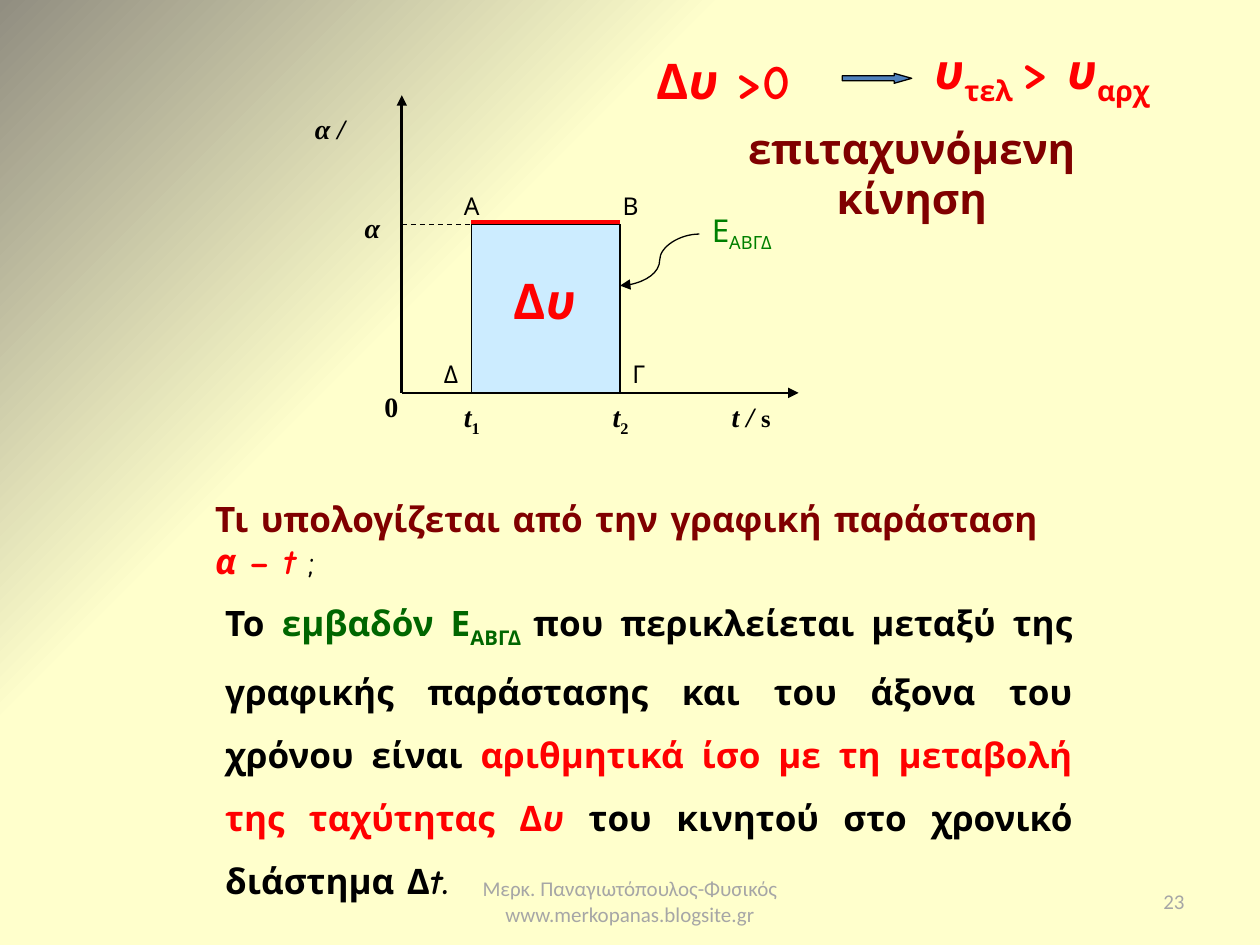
from dataclasses import dataclass

import pptx
import pptx.dml.color
import pptx.enum.dml
import pptx.enum.shapes
import pptx.enum.text
import pptx.oxml
import pptx.oxml.ns
import pptx.util

Cm, Pt = pptx.util.Cm, pptx.util.Pt
ALIGN, ANCHOR = pptx.enum.text.PP_ALIGN, pptx.enum.text.MSO_ANCHOR
SHAPE, CONNECTOR = pptx.enum.shapes.MSO_SHAPE, pptx.enum.shapes.MSO_CONNECTOR
A_NS = pptx.oxml.ns.nsdecls("a")


@dataclass(frozen=True)
class Theme:
    paper: str = "FFFFCC"
    corner: str = "918E81"
    ink: str = "000000"
    red: str = "FF0000"
    maroon: str = "800000"
    green: str = "008000"
    dark_green: str = "006600"
    area: str = "CCECFF"
    arrow: str = "4F81BD"
    muted: str = "A6A6A6"
    body_font: str = "Comic Neue"
    symbol_font: str = "Times New Roman"
    footer_font: str = "Calibri"
    formula: int = 28
    heading: int = 24
    body: int = 20
    area_name: int = 18
    symbol: int = 16
    point: int = 14
    footer: int = 12


T = Theme()


def rgb(value):
    return pptx.dml.color.RGBColor.from_string(value)


def part(text, **look):
    """A stretch of text with its own color, size, italic or sub."""
    return text, look


def add_text(slide, box, parts, size, color=T.ink, font=T.body_font, bold=True, align=ALIGN.LEFT,
             spacing=None, anchor=ANCHOR.TOP, wrap=True):
    frame = slide.shapes.add_textbox(*map(Cm, box)).text_frame
    frame.word_wrap, frame.vertical_anchor = wrap, anchor
    paragraph = frame.paragraphs[0]
    paragraph.alignment = align
    if spacing:
        paragraph.line_spacing = spacing
    paragraph.font.name, paragraph.font.size = font, Pt(size)
    paragraph.font.bold, paragraph.font.color.rgb = bold, rgb(color)
    for text, look in parts:
        if text == "\n":
            paragraph.add_line_break()
            continue
        run = paragraph.add_run()
        run.text = text
        if "color" in look:
            run.font.color.rgb = rgb(look["color"])
        if "size" in look:
            run.font.size = Pt(look["size"])
        for style in ("bold", "italic"):
            if style in look:
                setattr(run.font, style, look[style])
        if look.get("sub"):
            run._r.get_or_add_rPr().set("baseline", "-25000")


def add_line(slide, start, end, color=T.ink, width=0.75, dashed=False, arrow=None,
             kind=CONNECTOR.STRAIGHT):
    """arrow is headEnd (at start) or tailEnd (at end)."""
    line = slide.shapes.add_connector(kind, *map(Cm, (*start, *end)))
    line.line.color.rgb, line.line.width = rgb(color), Pt(width)
    if dashed:
        line.line.dash_style = pptx.enum.dml.MSO_LINE.DASH
    properties = line._element.spPr
    if arrow:
        properties.get_or_add_ln().append(
            pptx.oxml.parse_xml(f'<a:{arrow} {A_NS} type="triangle"/>'))
    properties.append(pptx.oxml.parse_xml(f"<a:effectLst {A_NS}/>"))


def add_block(slide, kind, box, fill):
    block = slide.shapes.add_shape(kind, *map(Cm, box))
    block.shadow.inherit = False
    block.fill.solid()
    block.fill.fore_color.rgb = rgb(fill)
    block.line.color.rgb, block.line.width = rgb(T.ink), Pt(0.75)
    return block


def paint_background(slide):
    fill = slide.background.fill
    fill.gradient()
    for stop, position, color in zip(fill.gradient_stops, (0.67, 1), (T.paper, T.corner)):
        stop.position, stop.color.rgb = position, rgb(color)
    linear = slide.element.find(".//" + pptx.oxml.ns.qn("a:lin"))
    linear.getparent().replace(linear, pptx.oxml.parse_xml(
        f'<a:path {A_NS} path="circle"><a:fillToRect l="100000" t="100000"/></a:path>'))


def draw_graph(slide, box):
    """Acceleration against time; the box is spanned by the two axes."""
    left, top, width, height = box
    axis = top + height
    t1, t2, level = left + 1.4, left + 4.4, axis - 3.4

    def symbol(x, y, w, *parts):
        add_text(slide, (x, y, w, 0.94), parts, T.symbol, font=T.symbol_font)

    def point(x, y, name):
        add_text(slide, (x, y, 0.91, 0.84), [part(name)], T.point, bold=False)

    # Constant acceleration and its guides
    add_line(slide, (t1, level), (t2, level), T.red, 4.5)
    add_line(slide, (left, level), (t2, level), dashed=True)
    symbol(left - 1, level - 0.4, 0.8, part("α", italic=True))
    for time, index in ((t1, "1"), (t2, "2")):
        add_line(slide, (time, level), (time, axis), dashed=True)
        symbol(time - 0.4, axis, 1.2, part("t", italic=True), part(index, sub=True))

    # Corners of the area
    point(t1 - 0.4, level - 0.8, "Α")
    point(t2 - 0.2, level - 0.8, "Β")
    point(t2, axis - 0.8, "Γ")
    point(t1 - 0.8, axis - 0.8, "Δ")

    # Area with its callout
    add_line(slide, (t2, level + 1.24), (t2 + 1.6, level + 0.2), arrow="headEnd",
             kind=CONNECTOR.CURVE)
    add_text(slide, (t2 + 1.6, level - 0.4, 2.8, 1.27),
             [part("Ε"), part("ΑΒΓΔ", sub=True)], T.area_name, T.green, bold=False)
    add_block(slide, SHAPE.RECTANGLE, (t1, level, t2 - t1, axis - level), T.area)
    add_text(slide, (t1 + 0.6, level + 0.8, 2, 1.45),
             [part("Δ"), part("υ", italic=True)], T.formula, T.red)

    # Axes
    for end in ((left, top), (left + width, axis)):
        add_line(slide, (left, axis), end, width=1.5, arrow="tailEnd")
    symbol(left + 6.4, axis, 1.8, part("t / ", italic=True), part("s", size=T.point))
    symbol(left - 0.6, axis - 0.2, 0.8, part("0"))
    symbol(left - 2, top + 0.2, 1.4, part("α /", italic=True))


def write_conclusion(slide, box):
    """Sign of the velocity change and the kind of motion."""
    left, top, width, height = box
    add_text(slide, (left + 0.7, top + 1.65, 9.4, 1.27), [part("επιταχυνόμενη κίνηση")],
             T.heading, T.maroon, align=ALIGN.CENTER)
    add_text(slide, (left, top + 0.2, 4.2, 1.45),
             [part("Δ"), part("υ ", italic=True), part(">0")], T.formula, T.red)
    implies = add_block(slide, SHAPE.RIGHT_ARROW, (left + 4, top + 0.79, 1.4, 0.2), T.arrow)
    implies.adjustments[1] = 1.77
    add_text(slide, (left + 5.6, top, width - 5.6, 1.45),
             [part("υ", italic=True), part("τελ ", sub=True), part("> "),
              part("υ", italic=True), part("αρχ", sub=True)], T.formula, T.red, wrap=False)


def write_explanation(slide, box):
    """Question and answer on what the graph gives."""
    left, top, width, height = box
    add_text(slide, (left, top, width, 1.12),
             [part("Τι υπολογίζεται από την γραφική παράσταση"), part("\n"),
              part("α", color=T.red, italic=True), part(" – ", color=T.red),
              part("t ", color=T.red, italic=True), part(";", color=T.ink, bold=False)],
             T.body, T.maroon)
    add_text(slide, (left + 0.2, top + 1.63, width - 0.22, height - 1.63),
             [part("Το "), part("εμβαδόν Ε", color=T.dark_green),
              part("ΑΒΓΔ ", color=T.dark_green, sub=True),
              part("που περικλείεται μεταξύ της γραφικής παράστασης και του άξονα "
                   "του χρόνου είναι "),
              part("αριθμητικά ίσο με τη μεταβολή της ταχύτητας Δ", color=T.red),
              part("υ ", color=T.red, italic=True),
              part("του κινητού στο χρονικό διάστημα Δ"), part("t", italic=True), part(".")],
             T.body, align=ALIGN.JUSTIFY, spacing=1.5)


def write_footer(slide, box):
    left, top, width, height = box
    author = [part("Μερκ. Παναγιωτόπουλος-Φυσικός"), part("\n"),
              part("www.merkopanas.blogsite.gr")]
    for x, w, parts, align in ((left, 8.04, author, ALIGN.CENTER),
                               (left + width - 5.93, 5.93, [part("23")], ALIGN.RIGHT)):
        add_text(slide, (x, top, w, height), parts, T.footer, T.muted, T.footer_font,
                 bold=False, align=align, anchor=ANCHOR.MIDDLE)


def main():
    deck = pptx.Presentation()
    deck.slide_width, deck.slide_height = Cm(25.4), Cm(19.05)
    slide = deck.slides.add_slide(deck.slide_layouts.get_by_name("Blank"))
    paint_background(slide)
    write_footer(slide, (8.68, 17.66, 15.45, 1.01))
    draw_graph(slide, (8.1, 1.92, 8, 6))
    write_explanation(slide, (4.09, 9.9, 17.8, 7.02))
    write_conclusion(slide, (12.98, 0.69, 10.76, 2.92))
    deck.save("out.pptx")


if __name__ == "__main__":
    main()
